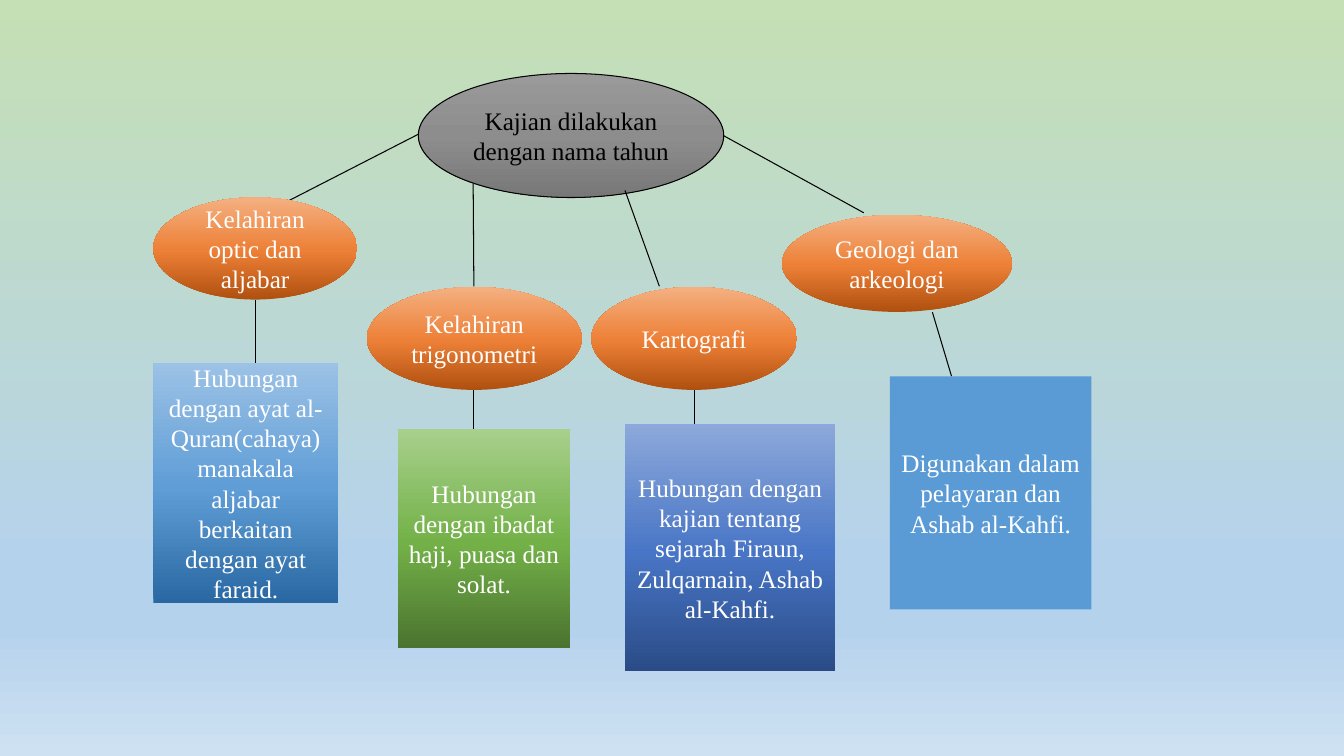
from pptx import Presentation, oxml
from pptx import util as u
from pptx.dml import color
from pptx.enum import shapes, text
from pptx.oxml import ns

OVAL = shapes.MSO_SHAPE.OVAL
BOX = shapes.MSO_SHAPE.RECTANGLE
DOWN, UP = 270, 90


def rgb(hex_code):
    return color.RGBColor.from_string(hex_code)


class ConceptMap:
    font = "Times New Roman"
    size = 18
    ink = "000000"
    line_width = 0.75

    def __init__(self, slide):
        self.slide = slide

    def paint(self, fill, owner, stops, angle):
        fill.gradient()
        fill.gradient_angle = angle
        stop_list = next(owner.iter(ns.qn("a:gsLst")))
        for old_stop in list(stop_list):
            stop_list.remove(old_stop)
        for position, hex_code in stops:
            stop_list.append(oxml.parse_xml(
                f'<a:gs {ns.nsdecls("a")} pos="{position * 1000}">'
                f'<a:srgbClr val="{hex_code}"/></a:gs>'))

    def backdrop(self, stops):
        self.paint(self.slide.background.fill, self.slide.element, stops, DOWN)

    def node(self, kind, place, wording, fill, angle=UP, ink="FFFFFF", outline=None):
        node = self.slide.shapes.add_shape(kind, *map(u.Pt, place))
        node.shadow.inherit = False
        if isinstance(fill, str):
            node.fill.solid()
            node.fill.fore_color.rgb = rgb(fill)
        else:
            self.paint(node.fill, node.element, fill, angle)
        if outline:
            node.line.color.rgb = rgb(outline)
            node.line.width = u.Pt(self.line_width)
        else:
            node.line.fill.background()
        frame = node.text_frame
        frame.word_wrap = True
        frame.vertical_anchor = text.MSO_ANCHOR.MIDDLE
        frame.text = wording
        paragraph = frame.paragraphs[0]
        paragraph.alignment = text.PP_ALIGN.CENTER
        font = paragraph.runs[0].font
        font.name = self.font
        font.size = u.Pt(self.size)
        font.color.rgb = rgb(ink)

    def link(self, *ends):
        link = self.slide.shapes.add_connector(
            shapes.MSO_CONNECTOR.STRAIGHT, *map(u.Pt, ends))
        link.line.color.rgb = rgb(self.ink)
        link.line.width = u.Pt(self.line_width)
        link.element.spPr.append(oxml.parse_xml(f'<a:effectLst {ns.nsdecls("a")}/>'))


def shades(dark, middle, light):
    return [(0, dark), (48, middle), (100, light)]


ORANGE = shades("B0500F", "ED8037", "F4B081")
BLUE = shades("2968A2", "5F9DD6", "9CC2E5")
GREEN = shades("4B732F", "73B148", "A8D08C")
INDIGO = shades("2A4B86", "4875C5", "8DA9DB")
GREY = [(0, "9A9A9A"), (50, "8D8D8D"), (100, "787878")]
SKY = [(0, "C5E0B4"), (74, "B5D2EC"), (83, "B5D2EC"), (100, "CEE1F2")]

BRANCHES = [
    ("Kelahiran optic dan aljabar", (109.5, 141, 145.5, 73),
     (299, 95.8, 189.4, 152),
     "Hubungan dengan ayat al-Quran(cahaya) manakala aljabar berkaitan dengan ayat faraid.",
     (109.5, 259.2, 132, 171.5), BLUE, (182.4, 214, 182.4, 259.2)),
    ("Kelahiran trigonometri", (262, 205, 153.5, 73.5),
     (338, 131.5, 338.5, 204.5),
     "Hubungan dengan ibadat haji, puasa dan solat.",
     (284.4, 306.3, 122.6, 156.6), GREEN, (338.5, 278.5, 338.5, 311)),
    ("Kartografi", (422.4, 205, 146.8, 73.5),
     (446.4, 136, 471, 204.5),
     "Hubungan dengan kajian tentang sejarah Firaun, Zulqarnain, Ashab al-Kahfi.",
     (446.4, 303, 150.2, 176.4), INDIGO, (496, 278.5, 496, 303)),
    ("Geologi dan arkeologi", (558.6, 153.5, 164.2, 69.3),
     (517, 97, 617, 152),
     "Digunakan dalam pelayaran dan Ashab al-Kahfi.",
     (635.6, 268.8, 144, 166.5), "5B9BD5", (666, 223, 679.7, 268.8)),
]


def main():
    deck = Presentation()
    deck.slide_width, deck.slide_height = u.Pt(960), u.Pt(540)
    study = ConceptMap(deck.slides.add_slide(deck.slide_layouts[6]))
    study.backdrop(SKY)
    study.node(OVAL, (298.8, 52.5, 218.2, 88.6), "Kajian dilakukan dengan nama tahun",
               GREY, angle=DOWN, ink="000000", outline="000000")
    for topic, topic_place, root_link, detail, detail_place, tint, detail_link in BRANCHES:
        study.link(*root_link)
        study.link(*detail_link)
        study.node(OVAL, topic_place, topic, ORANGE)
        study.node(BOX, detail_place, detail, tint)
    deck.save("out.pptx")


if __name__ == "__main__":
    main()
